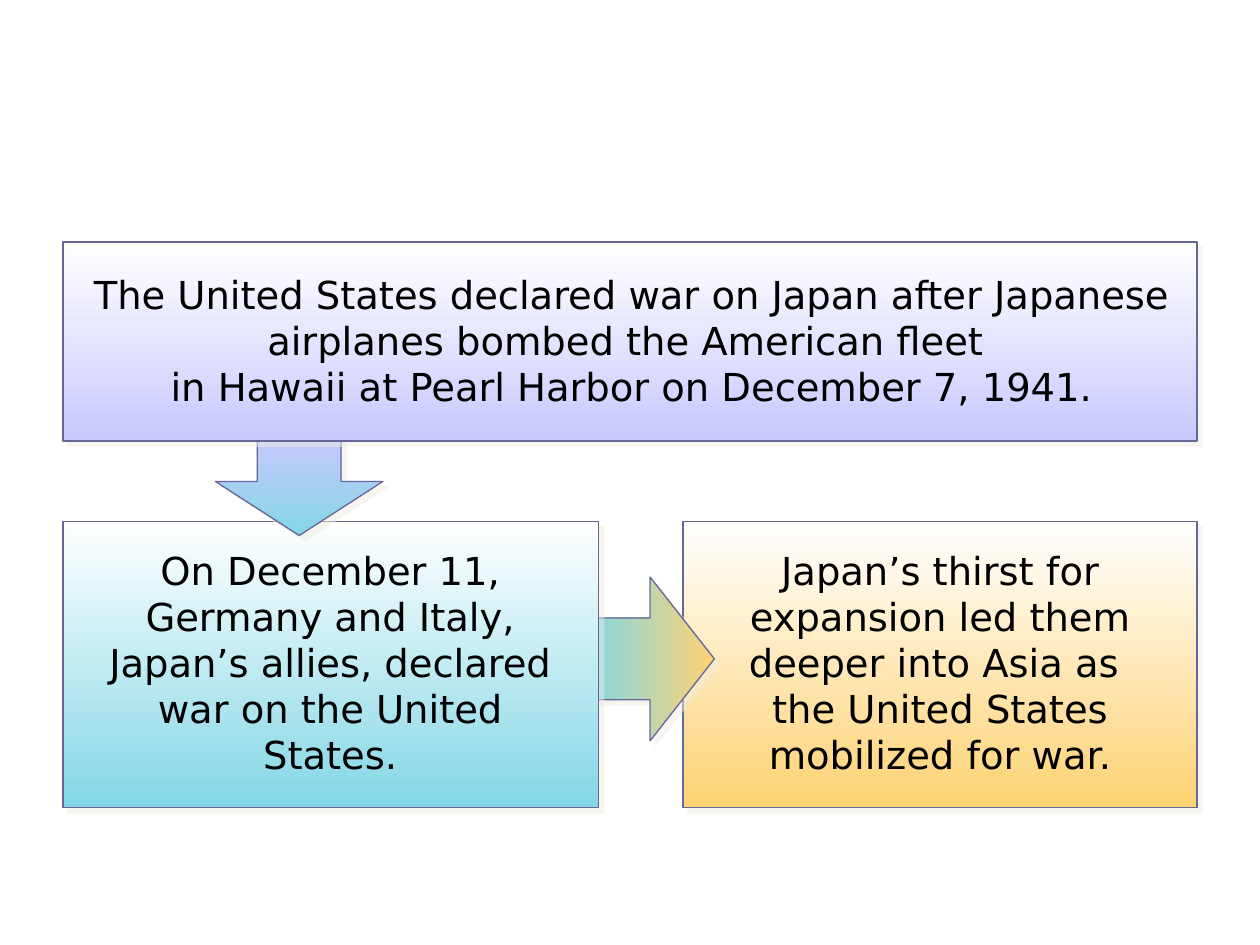
from lxml import etree
from pptx import Presentation
from pptx import util as u
from pptx.dml.color import RGBColor
from pptx.enum import shapes, text
from pptx.oxml.ns import qn

WHITE, LILAC, AQUA, GOLD = "FFFFFF", "C9C9FF", "83D7E5", "FED273"
OUTLINE, SHADOW = "666699", "EEECE1"
DOWN, RIGHT = 270, 0


def color(value):
    return RGBColor.from_string(value)


def write(frame, content, size=22, font="DejaVu Sans", ink="000000",
          align=text.PP_ALIGN.CENTER):
    para = frame.paragraphs[0]
    para.alignment = align
    for index, line in enumerate(content.split("\n")):
        if index:
            para.add_line_break()
        span = para.add_run()
        span.text = line
        span.font.size = u.Pt(size)
        span.font.name = font
        span.font.color.rgb = color(ink)


class Flow:
    def __init__(self, page):
        self.page = page

    def add_shadow(self, shape):
        shape.shadow.inherit = False
        effects = shape._element.spPr.find(qn("a:effectLst"))
        outer = etree.SubElement(effects, qn("a:outerShdw"), dist=str(u.Pt(4.2)),
                                 dir="2700000", algn="ctr", rotWithShape="0")
        tint = etree.SubElement(outer, qn("a:srgbClr"), val=SHADOW)
        etree.SubElement(tint, qn("a:alpha"), val="50000")

    def gradient_shape(self, parent, kind, place, start, end, angle, width):
        shape = parent.add_shape(kind, *map(u.Inches, place))
        shape.fill.gradient()
        shape.fill.gradient_angle = angle
        for stop, value in zip(shape.fill.gradient_stops, (start, end)):
            stop.color.rgb = color(value)
        shape.line.color.rgb = color(OUTLINE)
        shape.line.width = u.Pt(width)
        self.add_shadow(shape)
        return shape

    def panel(self, place, text_place, tint, content):
        group = self.page.shapes.add_group_shape().shapes
        self.gradient_shape(group, shapes.MSO_SHAPE.RECTANGLE, place,
                            WHITE, tint, DOWN, 1)
        box = group.add_textbox(*map(u.Inches, text_place))
        box.text_frame.word_wrap = True
        box.text_frame.auto_size = text.MSO_AUTO_SIZE.SHAPE_TO_FIT_TEXT
        write(box.text_frame, content)

    def arrow(self, kind, place, start, end, angle, head):
        shape = self.gradient_shape(self.page.shapes, kind, place,
                                    start, end, angle, 0.75)
        shape.adjustments[0] = 0.5
        shape.adjustments[1] = head


def main():
    deck = Presentation()
    deck.slide_width, deck.slide_height = u.Inches(10), u.Inches(7.5)
    flow = Flow(deck.slides.add_slide(deck.slide_layouts[6]))

    flow.panel((5.42, 4.14, 4.08, 2.27), (5.52, 4.29, 3.88, 1.93), GOLD,
               "Japan’s thirst for expansion led them deeper into Asia as \n"
               "the United States mobilized for war.")
    flow.arrow(shapes.MSO_SHAPE.RIGHT_ARROW, (4.67, 4.58, 1, 1.3),
               AQUA, GOLD, RIGHT, 0.51)
    flow.panel((0.5, 4.14, 4.25, 2.27), (0.61, 4.29, 4.02, 1.93), AQUA,
               "On December 11, Germany and Italy, Japan’s allies, "
               "declared war on the United States.")
    flow.arrow(shapes.MSO_SHAPE.DOWN_ARROW, (1.71, 3.47, 1.33, 0.78),
               LILAC, AQUA, DOWN, 0.55)
    flow.panel((0.5, 1.92, 9, 1.58), (0.62, 2.1, 8.78, 1.21), LILAC,
               "The United States declared war on Japan after Japanese "
               "airplanes bombed the American fleet \n"
               "in Hawaii at Pearl Harbor on December 7, 1941.")
    deck.save("out.pptx")


if __name__ == "__main__":
    main()
